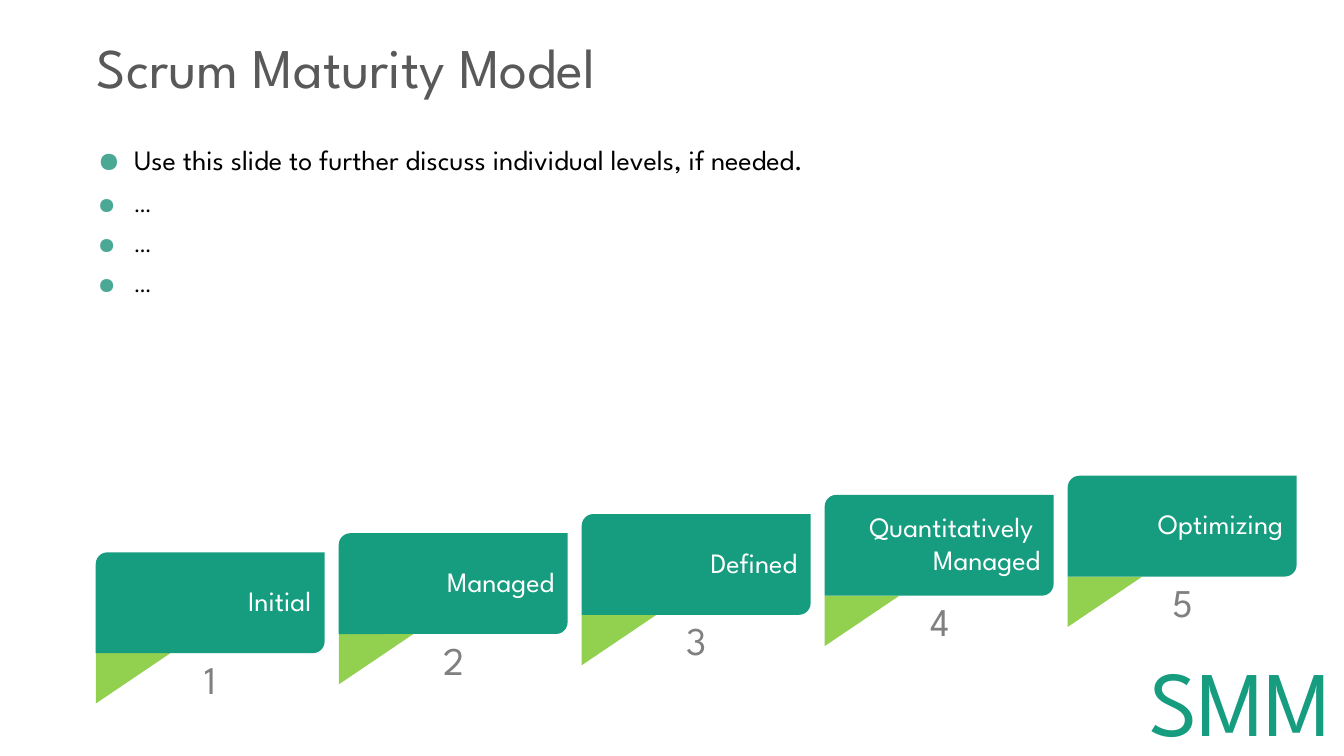
import lxml.etree
import pptx
import pptx.dml.color
import pptx.enum.shapes
import pptx.enum.text
import pptx.oxml.ns
import pptx.util

RGBColor = pptx.dml.color.RGBColor
Shape = pptx.enum.shapes.MSO_SHAPE
Align = pptx.enum.text.PP_ALIGN
Anchor = pptx.enum.text.MSO_ANCHOR
Inches = pptx.util.Inches
Pt = pptx.util.Pt
qn = pptx.oxml.ns.qn

# Colours and font
TEAL = RGBColor(0x16, 0x9C, 0x7F)
LIME = RGBColor(0x92, 0xD0, 0x50)
BULLET = RGBColor(0x4B, 0xA8, 0x95)
TITLE_GREY = RGBColor(0x59, 0x59, 0x59)
NUMBER_GREY = RGBColor(0x80, 0x80, 0x80)
BLACK = RGBColor(0, 0, 0)
WHITE = RGBColor(0xFF, 0xFF, 0xFF)
FONT = "League Spartan"

# Staircase grid, in inches: each step is one column right and one rise up
LEFT, BASE = 0.95, 5.48
COLUMN, RISE = 2.41, 0.19
BANNER_WIDTH, BANNER_HEIGHT = 2.27, 1.0
FOLD_WIDTH, FOLD_HEIGHT = 0.74, 0.5
NUMBER_WIDTH, NUMBER_HEIGHT = 0.42, 0.57

LEVELS = [
    ["Initial"],
    ["Managed"],
    ["Defined"],
    ["Quantitatively ", "Managed"],
    ["Optimizing"],
]
POINTS = [
    ("Use this slide to further discuss individual levels, if needed.", 20),
    ("…", 16),
    ("…", 16),
    ("…", 16),
]


def apply(target, values):
    for name, value in values.items():
        setattr(target, name, value)


def area(left, top, width, height):
    return [Inches(round(length, 2)) for length in (left, top, width, height)]


def style_span(span, size, color):
    apply(span.font, {"name": FONT, "size": Pt(size), "bold": False})
    span.font.color.rgb = color


def write(frame, lines, size, color, align, **frame_format):
    apply(frame, {"word_wrap": True, "auto_size": pptx.enum.text.MSO_AUTO_SIZE.NONE,
                  "vertical_anchor": Anchor.TOP, **frame_format})
    for index, line in enumerate(lines):
        para = frame.add_paragraph() if index else frame.paragraphs[0]
        para.alignment = align
        span = para.add_run()
        span.text = line
        style_span(span, size, color)


def add_filled(shapes, kind, place, color):
    shape = shapes.add_shape(kind, *place)
    shape.shadow.inherit = False
    shape.fill.solid()
    shape.fill.fore_color.rgb = color
    shape.line.fill.background()
    return shape


def add_fold(page, step):
    """Folded corner and level number below a banner."""
    left = LEFT + step * COLUMN
    top = BASE - step * RISE + BANNER_HEIGHT
    group = page.shapes.add_group_shape()
    # The triangle turns about its centre, so its sides are swapped here
    shift = (FOLD_WIDTH - FOLD_HEIGHT) / 2
    place = area(left + shift, top - shift, FOLD_HEIGHT, FOLD_WIDTH)
    fold = add_filled(group.shapes, Shape.RIGHT_TRIANGLE, place, LIME)
    fold.rotation = 90
    number_left = left + (BANNER_WIDTH - NUMBER_WIDTH) / 2
    box = group.shapes.add_textbox(*area(number_left, top - 0.03, NUMBER_WIDTH, NUMBER_HEIGHT))
    write(box.text_frame, [str(step + 1)], 28, NUMBER_GREY, Align.CENTER, word_wrap=False)


def add_banner(page, step, lines):
    place = area(LEFT + step * COLUMN, BASE - step * RISE, BANNER_WIDTH, BANNER_HEIGHT)
    banner = add_filled(page.shapes, Shape.ROUND_2_DIAG_RECTANGLE, place, TEAL)
    banner.adjustments[0] = 0.115
    banner.adjustments[1] = 0
    write(banner.text_frame, lines, 20, WHITE, Align.RIGHT, vertical_anchor=Anchor.MIDDLE,
          margin_top=0, margin_bottom=Inches(0.05))


def add_bullet(para):
    properties = para._p.get_or_add_pPr()
    properties.set("marL", str(Inches(0.5)))
    properties.set("indent", str(Inches(-0.36)))
    color = lxml.etree.SubElement(properties, qn("a:buClr"))
    lxml.etree.SubElement(color, qn("a:srgbClr"), val=str(BULLET))
    lxml.etree.SubElement(properties, qn("a:buChar"), char="●")


def add_points(page):
    table = page.shapes.add_table(1, 1, *area(0.53, 1.3, 8.89, 1.79)).table
    apply(table, {"first_row": False, "horz_banding": False})
    cell = table.cell(0, 0)
    cell.fill.background()
    apply(cell, {"margin_left": Inches(0.3), "margin_right": Inches(0.3),
                 "margin_top": Inches(0.2), "margin_bottom": Inches(0.2)})
    frame = cell.text_frame
    for index, (text, size) in enumerate(POINTS):
        para = frame.add_paragraph() if index else frame.paragraphs[0]
        add_bullet(para)
        para.space_after = Pt(14)
        span = para.add_run()
        span.text = text
        style_span(span, size, BLACK)


def add_title(page):
    title = page.shapes.title
    apply(title, dict(zip(("left", "top", "width", "height"), area(0.86, 0.27, 6.29, 0.77))))
    write(title.text_frame, ["Scrum Maturity Model"], 40, TITLE_GREY, Align.LEFT)


def add_acronym(page):
    box = page.shapes.add_textbox(*area(9.86, 6.47, 3.45, 0.94))
    write(box.text_frame, ["SMM"], 66, TEAL, Align.RIGHT, vertical_anchor=Anchor.MIDDLE)


def main():
    deck = pptx.Presentation()
    apply(deck, {"slide_width": Inches(13.33), "slide_height": Inches(7.5)})
    page = deck.slides.add_slide(deck.slide_layouts.get_by_name("Title Only"))

    # Heading and discussion points
    add_title(page)
    for step in range(len(LEVELS)):
        add_fold(page, step)
    add_points(page)
    add_acronym(page)

    # Maturity levels
    for step, lines in enumerate(LEVELS):
        add_banner(page, step, lines)
    deck.save("out.pptx")


if __name__ == "__main__":
    main()
